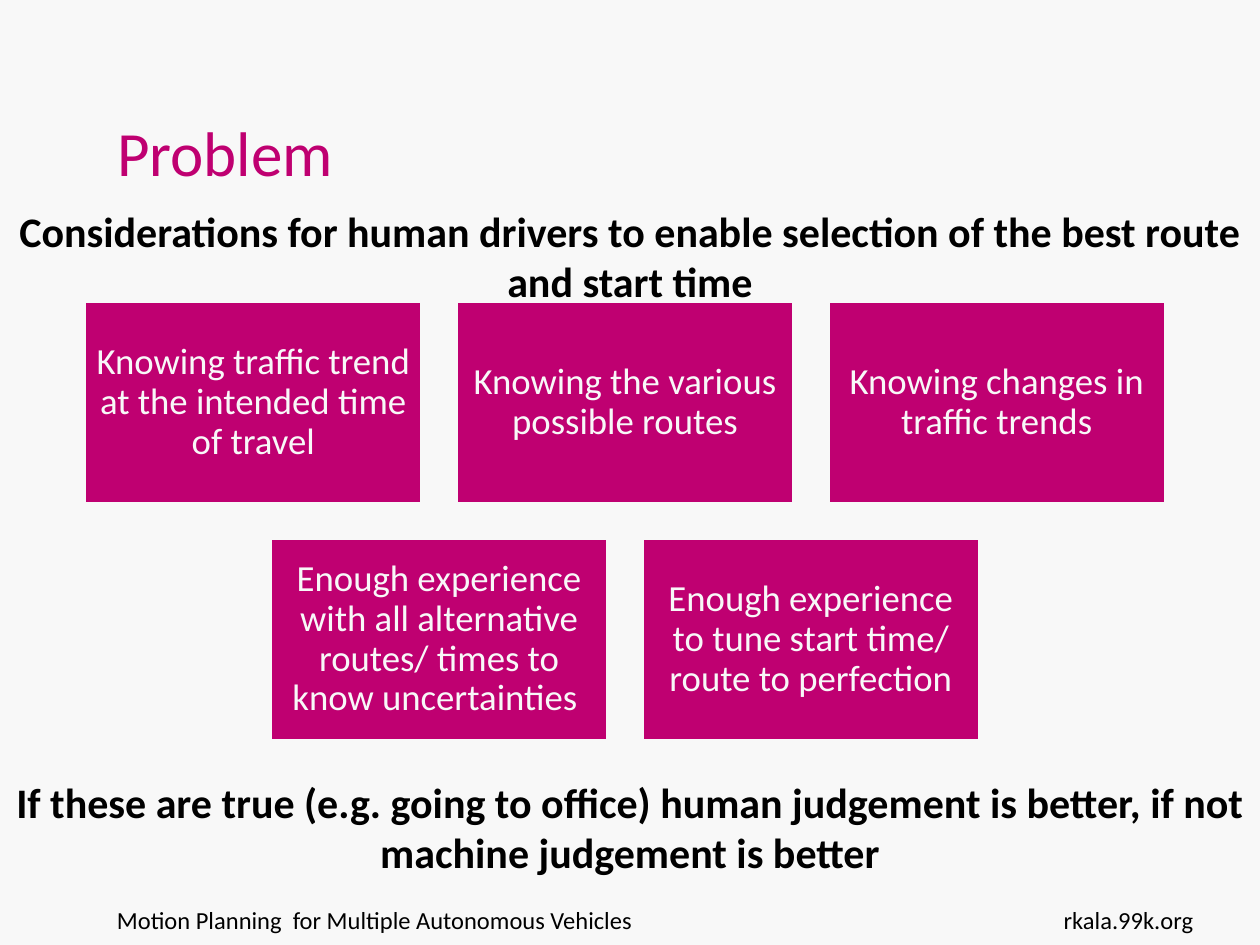
import dataclasses

import pptx
import pptx.dml.color
import pptx.enum.shapes
import pptx.enum.text
import pptx.util

Inches = pptx.util.Inches
RGB = pptx.dml.color.RGBColor
Align = pptx.enum.text.PP_ALIGN
Anchor = pptx.enum.text.MSO_ANCHOR
Fit = pptx.enum.text.MSO_AUTO_SIZE


@dataclasses.dataclass(frozen=True)
class Theme:
    face: str = "Calibri"
    back: RGB = RGB.from_string("F8F8F8")
    pink: RGB = RGB.from_string("BF0071")
    ink: RGB = RGB.from_string("000000")
    head: float = 36
    lead: float = 24
    card: float = 21
    foot: float = 14


@dataclasses.dataclass(frozen=True)
class Label:
    text: str
    left: float
    top: float
    width: float
    height: float
    size: float
    align: Align
    bold: bool = False


THEME = Theme()

# Card grid: each row is centred on the same axis
CARD_W, CARD_H, GAP = 2.68, 1.61, 0.27
MID, GRID_TOP = 4.96, 2.39
ROWS = [
    [
        "Knowing traffic trend at the intended time of travel",
        "Knowing the various possible routes",
        "Knowing changes in traffic trends",
    ],
    [
        "Enough experience with all alternative routes/ times to know uncertainties ",
        "Enough experience to tune start time/ route to perfection",
    ],
]

LABELS = [
    Label("Motion Planning  for Multiple Autonomous Vehicles",
          0.83, 7.13, 6.93, 0.52, THEME.foot, Align.LEFT),
    Label("rkala.99k.org", 8.07, 7.13, 1.5, 0.52, THEME.foot, Align.RIGHT),
    Label("Considerations for human drivers to enable selection of the best "
          "route and start time",
          0, 1.58, 10, 0.91, THEME.lead, Align.CENTER, True),
    Label("If these are true (e.g. going to office) human judgement is better, "
          "if not machine judgement is better",
          0, 6.11, 10, 0.91, THEME.lead, Align.CENTER, True),
]


def apply(item, form: dict) -> None:
    for name, value in form.items():
        setattr(item, name, value)


def write(shape, text: str, size: float, color: RGB, align: Align,
          anchor: Anchor = Anchor.TOP, bold: bool = False) -> None:
    """Fill a shape with one formatted paragraph."""
    frame = shape.text_frame
    frame.text = text
    apply(frame, {"word_wrap": True, "auto_size": Fit.NONE,
                  "vertical_anchor": anchor})
    para = frame.paragraphs[0]
    para.alignment = align
    font = para.runs[0].font
    apply(font, {"name": THEME.face, "size": pptx.util.Pt(size), "bold": bold})
    font.color.rgb = color


def draw_label(slide, label: Label) -> None:
    box = slide.shapes.add_textbox(
        Inches(label.left), Inches(label.top),
        Inches(label.width), Inches(label.height))
    write(box, label.text, label.size, THEME.ink, label.align, bold=label.bold)


def draw_card(slide, text: str, left: float, top: float) -> None:
    card = slide.shapes.add_shape(
        pptx.enum.shapes.MSO_SHAPE.RECTANGLE, Inches(left), Inches(top),
        Inches(CARD_W), Inches(CARD_H))
    card.shadow.inherit = False
    card.fill.solid()
    card.fill.fore_color.rgb = THEME.pink
    card.line.color.rgb = THEME.back
    card.line.width = pptx.util.Pt(2)
    write(card, text, THEME.card, THEME.back, Align.CENTER, Anchor.MIDDLE)
    edges = ("left", "top", "right", "bottom")
    apply(card.text_frame, {f"margin_{edge}": Inches(0.09) for edge in edges})
    card.text_frame.paragraphs[0].line_spacing = 0.9


def main() -> None:
    deck = pptx.Presentation()
    apply(deck, {"slide_width": Inches(10), "slide_height": Inches(7.5)})
    slide = deck.slides.add_slide(deck.slide_layouts[5])
    slide.background.fill.solid()
    slide.background.fill.fore_color.rgb = THEME.back

    # Title
    title = slide.shapes.title
    apply(title, {"left": Inches(0.83), "top": Inches(0.3),
                  "width": Inches(6.77), "height": Inches(1.25)})
    write(title, "Problem", THEME.head, THEME.pink, Align.LEFT, Anchor.BOTTOM)

    # Cards
    for row, texts in enumerate(ROWS):
        span = len(texts) * (CARD_W + GAP) - GAP
        for col, text in enumerate(texts):
            draw_card(slide, text, MID - span / 2 + col * (CARD_W + GAP),
                      GRID_TOP + row * (CARD_H + GAP))

    # Statements and footer
    for label in LABELS:
        draw_label(slide, label)

    deck.save("out.pptx")


if __name__ == "__main__":
    main()
